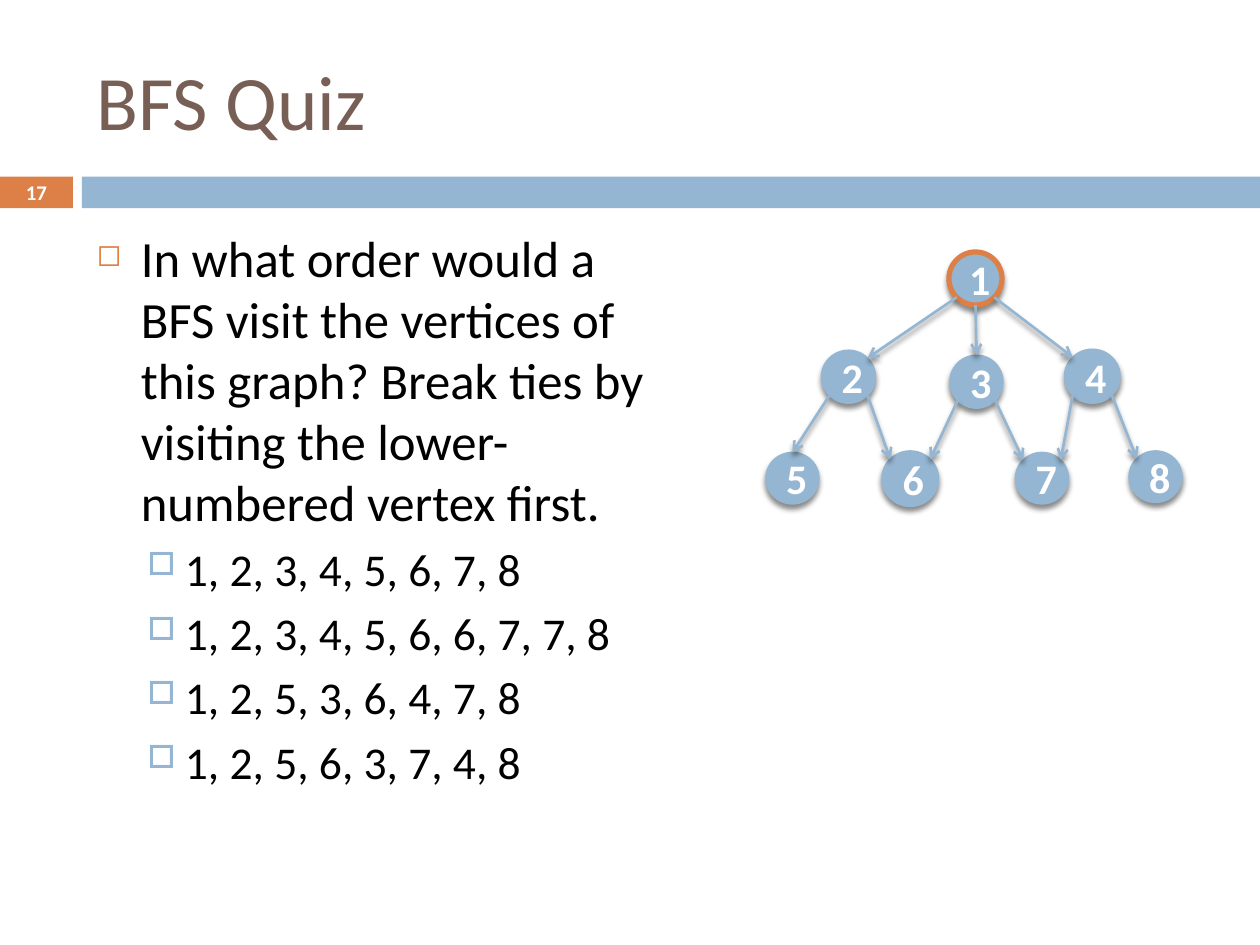
from dataclasses import dataclass
from math import sqrt

from lxml.etree import SubElement
from pptx import Presentation
from pptx.dml.color import RGBColor
from pptx.enum.shapes import MSO_CONNECTOR, MSO_SHAPE
from pptx.enum.text import MSO_ANCHOR, PP_ALIGN
from pptx.oxml.ns import qn
from pptx.util import Cm, Pt

ELLIPSE = MSO_SHAPE.OVAL
RECTANGLE = MSO_SHAPE.RECTANGLE
STRAIGHT = MSO_CONNECTOR.STRAIGHT
MIDDLE = MSO_ANCHOR.MIDDLE
TOP = MSO_ANCHOR.TOP
CENTER = PP_ALIGN.CENTER
LEFT = PP_ALIGN.LEFT

FONT = "Calibri"
COLORS = {
    "blue": "94B6D2",
    "orange": "DD8047",
    "brown": "775F55",
    "black": "000000",
    "white": "FFFFFF",
}
DIAGONAL = 1 / sqrt(2)
SITES = {
    "top": (0, -1),
    "bottom": (0, 1),
    "top left": (-DIAGONAL, -DIAGONAL),
    "top right": (DIAGONAL, -DIAGONAL),
    "bottom left": (-DIAGONAL, DIAGONAL),
    "bottom right": (DIAGONAL, DIAGONAL),
}


@dataclass
class Vertex:
    label: str
    left: float
    top: float
    width: float = 1.07
    height: float = 1.07
    outline: str = "blue"
    outline_width: float = 0.79

    def site(self, name: str) -> tuple[Cm, Cm]:
        across, down = SITES[name]
        return (
            Cm(self.left + self.width / 2 * (1 + across)),
            Cm(self.top + self.height / 2 * (1 + down)),
        )


@dataclass
class Edge:
    parent: str
    parent_site: str
    child: str
    child_site: str


@dataclass
class BulletStyle:
    char: str
    color: str
    percent: int
    margin: float
    hanging: float
    size: float
    space_before: float
    level: int


QUESTION_STYLE = BulletStyle("◻", "orange", 60, 0.89, 0.89, 29, 7, 0)
ANSWER_STYLE = BulletStyle("□", "blue", 70, 1.78, 0.76, 26, 5.5, 1)
QUESTION = (
    "In what order would a BFS visit the vertices of this graph? "
    "Break ties by visiting the lower-numbered vertex first."
)
ANSWERS = [
    "1, 2, 3, 4, 5, 6, 7, 8",
    "1, 2, 3, 4, 5, 6, 6, 7, 7, 8",
    "1, 2, 5, 3, 6, 4, 7, 8",
    "1, 2, 5, 6, 3, 7, 4, 8",
]
VERTICES = [
    Vertex("1", 19.13, 5.08, outline="orange", outline_width=3),
    Vertex("2", 16.56, 7.06, 1.09),
    Vertex("3", 19.15, 7.16),
    Vertex("4", 21.46, 7.04, 1.12, 1.09),
    Vertex("5", 15.44, 9.12, height=1.04),
    Vertex("6", 17.78, 9.09, 1.14, 1.12),
    Vertex("7", 20.47, 9.12, height=1.04),
    Vertex("8", 22.76, 9.09, height=1.04),
]
EDGES = [
    Edge("1", "bottom left", "2", "top right"),
    Edge("1", "bottom", "3", "top"),
    Edge("1", "bottom right", "4", "top left"),
    Edge("2", "bottom left", "5", "top"),
    Edge("2", "bottom right", "6", "top left"),
    Edge("3", "bottom left", "6", "top right"),
    Edge("3", "bottom right", "7", "top left"),
    Edge("4", "bottom left", "7", "top right"),
    Edge("4", "bottom right", "8", "top left"),
]


def rgb(name: str) -> RGBColor:
    return RGBColor.from_string(COLORS[name])


def add_run(paragraph, text: str, size: float, color: str, bold: bool = False) -> None:
    run = paragraph.add_run()
    run.text = text
    run.font.name = FONT
    run.font.size = Pt(size)
    run.font.bold = bold
    run.font.color.rgb = rgb(color)


def add_frame(slide, left: float, top: float, width: float, height: float, anchor):
    frame = slide.shapes.add_textbox(Cm(left), Cm(top), Cm(width), Cm(height)).text_frame
    frame.word_wrap = True
    frame.vertical_anchor = anchor
    return frame


def add_band(slide, left: float, width: float, color: str) -> None:
    band = slide.shapes.add_shape(RECTANGLE, Cm(left), Cm(3.56), Cm(width), Cm(0.64))
    band.shadow.inherit = False
    band.fill.solid()
    band.fill.fore_color.rgb = rgb(color)
    band.line.fill.background()


def add_bullet(paragraph, text: str, style: BulletStyle) -> None:
    paragraph.level = style.level
    paragraph.alignment = LEFT
    paragraph.space_before = Pt(style.space_before)
    properties = paragraph._p.get_or_add_pPr()
    properties.set("marL", str(Cm(style.margin)))
    properties.set("indent", str(-Cm(style.hanging)))
    bullet_color = SubElement(properties, qn("a:buClr"))
    SubElement(bullet_color, qn("a:srgbClr"), val=COLORS[style.color])
    SubElement(properties, qn("a:buSzPct"), val=str(style.percent * 1000))
    SubElement(properties, qn("a:buChar"), char=style.char)
    add_run(paragraph, text, style.size, "black")


def add_shadow(shape) -> None:
    effects = SubElement(shape._element.spPr, qn("a:effectLst"))
    shadow = SubElement(
        effects, qn("a:outerShdw"), blurRad=str(Pt(3)), dist=str(Pt(2.4)),
        dir="5400000", rotWithShape="0",
    )
    shade = SubElement(shadow, qn("a:srgbClr"), val=COLORS["black"])
    SubElement(shade, qn("a:alpha"), val="45000")


def add_vertex(slide, vertex: Vertex) -> None:
    circle = slide.shapes.add_shape(
        ELLIPSE, Cm(vertex.left), Cm(vertex.top), Cm(vertex.width), Cm(vertex.height)
    )
    circle.fill.solid()
    circle.fill.fore_color.rgb = rgb("blue")
    circle.line.color.rgb = rgb(vertex.outline)
    circle.line.width = Pt(vertex.outline_width)
    add_shadow(circle)
    circle.text_frame.vertical_anchor = MIDDLE
    paragraph = circle.text_frame.paragraphs[0]
    paragraph.alignment = CENTER
    add_run(paragraph, vertex.label, 24, "white", bold=True)


def add_edge(slide, edge: Edge, vertices: dict[str, Vertex]) -> None:
    start = vertices[edge.parent].site(edge.parent_site)
    end = vertices[edge.child].site(edge.child_site)
    arrow = slide.shapes.add_connector(STRAIGHT, *start, *end)
    arrow.line.color.rgb = rgb("blue")
    arrow.line.width = Pt(1.5)
    SubElement(arrow._element.spPr.find(qn("a:ln")), qn("a:tailEnd"), type="arrow")
    add_shadow(arrow)


def main() -> None:
    presentation = Presentation()
    presentation.slide_width, presentation.slide_height = Cm(25.4), Cm(19.05)
    slide = presentation.slides.add_slide(presentation.slide_layouts[6])

    add_band(slide, 0, 1.47, "orange")
    add_band(slide, 1.65, 23.75, "blue")

    title = add_frame(slide, 1.7, 0.64, 22.66, 2.74, MIDDLE)
    add_run(title.paragraphs[0], "BFS Quiz", 44, "brown")

    quiz = add_frame(slide, 1.7, 4.45, 11.84, 12.5, TOP)
    add_bullet(quiz.paragraphs[0], QUESTION, QUESTION_STYLE)
    for answer in ANSWERS:
        add_bullet(quiz.add_paragraph(), answer, ANSWER_STYLE)

    page_number = add_frame(slide, 0, 3.53, 1.47, 0.69, MIDDLE).paragraphs[0]
    page_number.alignment = CENTER
    add_run(page_number, "17", 11.9, "white", bold=True)

    for vertex in VERTICES:
        add_vertex(slide, vertex)
    vertices = {vertex.label: vertex for vertex in VERTICES}
    for edge in EDGES:
        add_edge(slide, edge, vertices)

    presentation.save("out.pptx")


if __name__ == "__main__":
    main()
